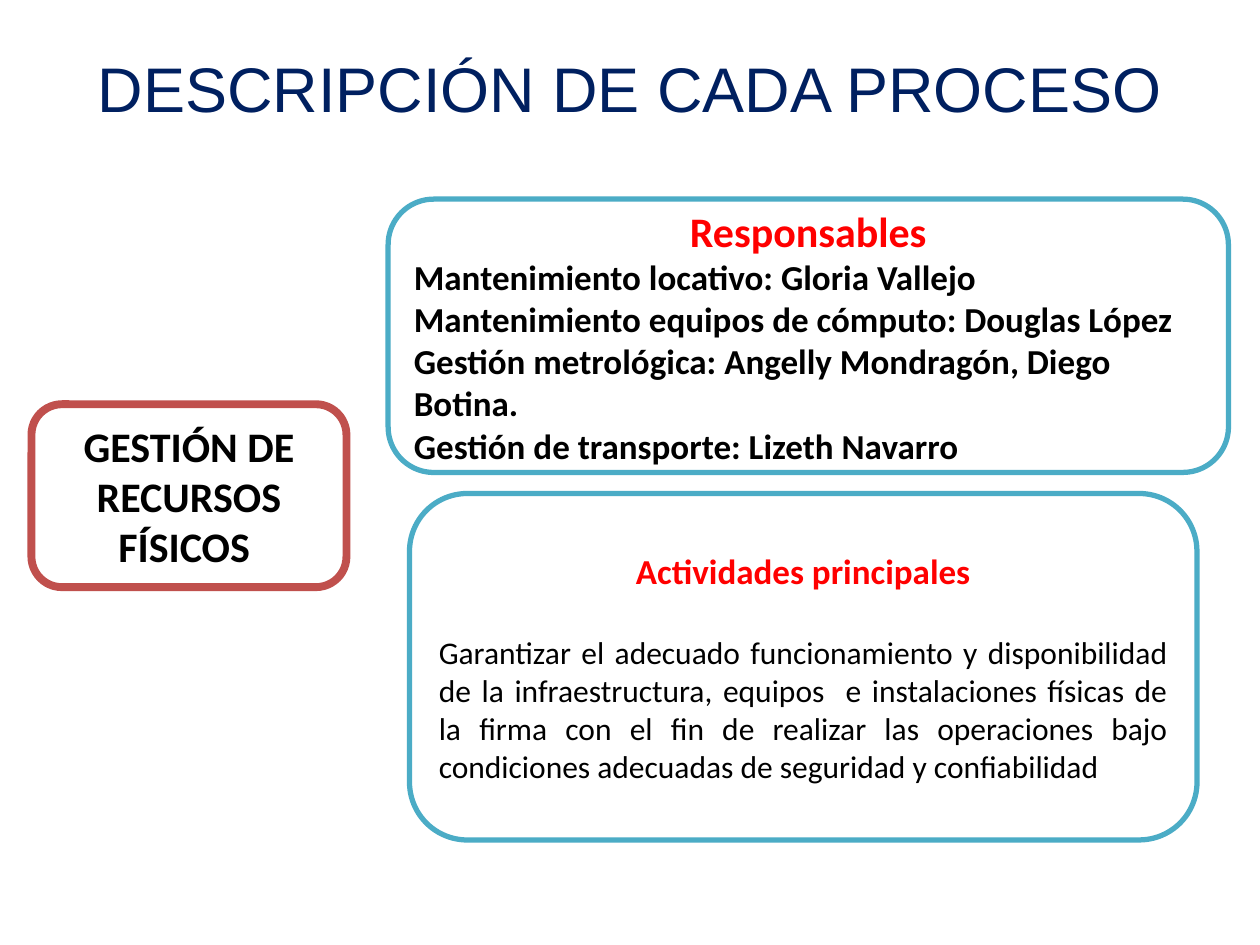
from pptx import Presentation
from pptx.dml.color import RGBColor
from pptx.enum import shapes, text
from pptx.util import Pt

COLORS = {"navy": "002060", "red": "FF0000", "black": "000000", "white": "FFFFFF",
          "brick": "C0504D", "teal": "4BACC6"}
CENTER, LEFT, JUSTIFY = text.PP_ALIGN.CENTER, text.PP_ALIGN.LEFT, text.PP_ALIGN.JUSTIFY


def color(name):
    return RGBColor.from_string(COLORS[name])


def write(box, lines, font="Calibri"):
    """Fill a box with (wording, size, colour, bold, alignment, space before) lines."""
    frame = box.text_frame
    frame.word_wrap = True
    frame.vertical_anchor = text.MSO_ANCHOR.MIDDLE
    for i, (wording, size, ink, bold, align, before) in enumerate(lines):
        para = frame.add_paragraph() if i else frame.paragraphs[0]
        para.alignment = align
        if before:
            para.space_before = Pt(before)
        span = para.add_run()
        span.text = wording
        span.font.name = font
        span.font.size = Pt(size)
        span.font.bold = bold
        span.font.color.rgb = color(ink)


deck = Presentation()
deck.slide_width, deck.slide_height = Pt(720), Pt(540)
page = deck.slides.add_slide(deck.slide_layouts[6])

title = page.shapes.add_textbox(Pt(36), Pt(21.6), Pt(648), Pt(56.2))
write(title, [("DESCRIPCIÓN DE CADA PROCESO", 36, "navy", False, CENTER, 0)], "Arial")

process = [("GESTIÓN DE RECURSOS FÍSICOS ", 24, "black", True, CENTER, 0)]

people = [
    "Mantenimiento locativo: Gloria Vallejo",
    "Mantenimiento equipos de cómputo: Douglas López",
    "Gestión metrológica: Angelly Mondragón, Diego Botina.",
    "Gestión de transporte: Lizeth Navarro",
]
owners = [("Responsables", 24, "red", True, CENTER, 0)]
owners += [(person, 20, "black", True, LEFT, 0) for person in people]

activities = [
    ("Actividades principales", 20, "red", True, CENTER, 0),
    ("Garantizar el adecuado funcionamiento y disponibilidad de la infraestructura, "
     "equipos  e instalaciones físicas de la firma con el fin de realizar las operaciones "
     "bajo condiciones adecuadas de seguridad y confiabilidad",
     18, "black", False, JUSTIFY, 24),
]

# left, top, width, height, border colour, border width, lines
cards = [
    (18, 231, 180, 104.5, "brick", 4.5, process),
    (221.8, 113.8, 480.2, 156.2, "teal", 3, owners),
    (234, 282, 450, 198, "teal", 3, activities),
]
for left, top, width, height, border, weight, lines in cards:
    card = page.shapes.add_shape(shapes.MSO_SHAPE.ROUNDED_RECTANGLE,
                                 Pt(left), Pt(top), Pt(width), Pt(height))
    card.shadow.inherit = False
    card.fill.solid()
    card.fill.fore_color.rgb = color("white")
    card.line.color.rgb = color(border)
    card.line.width = Pt(weight)
    write(card, lines)

deck.save("out.pptx")
